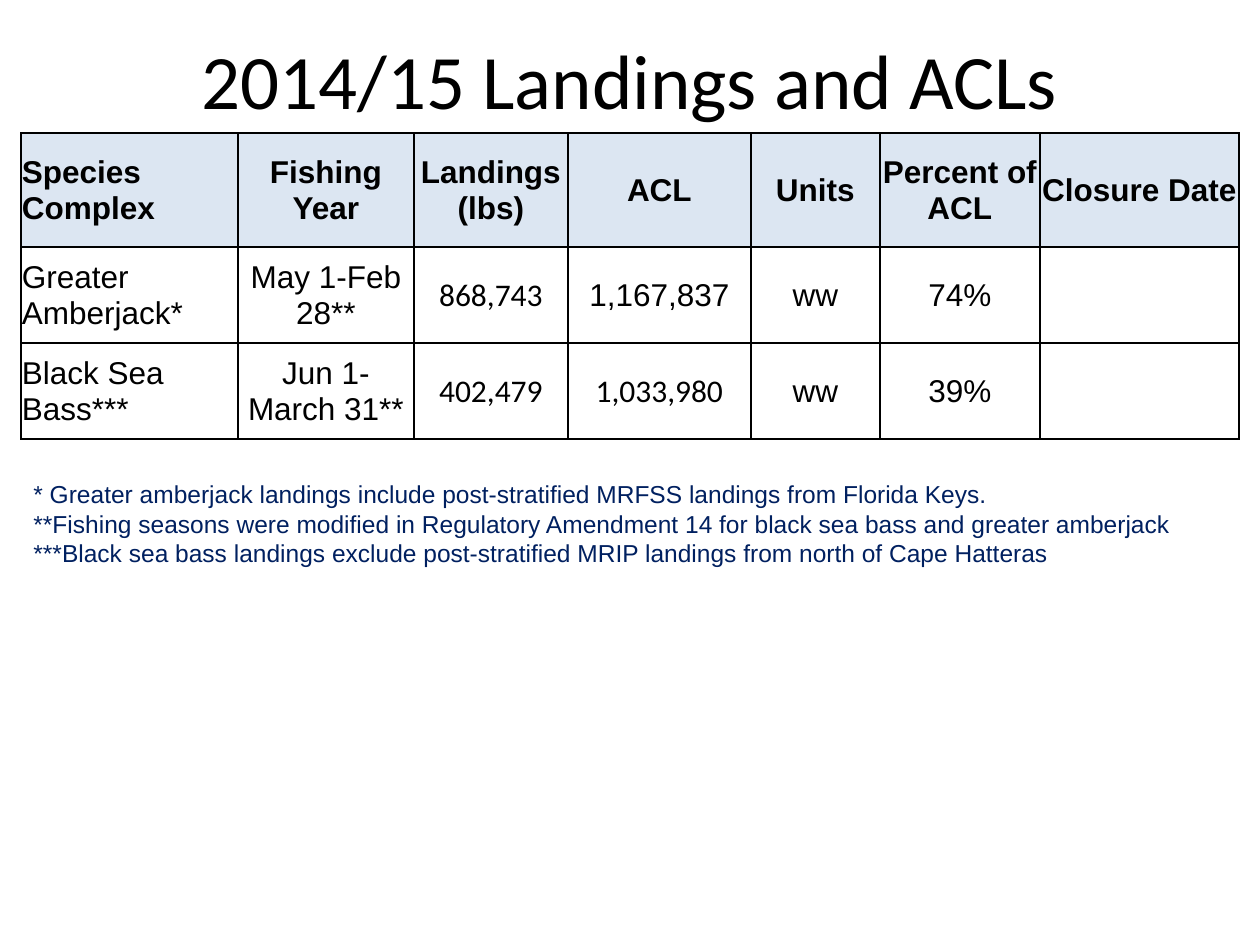
from lxml import etree
from pptx import Presentation
from pptx import util as u
from pptx.dml.color import RGBColor
from pptx.enum import text
from pptx.oxml.ns import qn

PX = 914400 / 126
COLORS = {"ink": "000000", "note": "002060", "head": "DCE6F2", "body": "FFFFFF"}
LEFT, WIDTH = 21, 1218


def px(n):
    return u.Emu(round(n * PX))


def write(tf, content, size=18, font="Arial", color="ink", bold=False, align="LEFT"):
    for i, line in enumerate(content.split("\n")):
        p = tf.paragraphs[0] if i == 0 else tf.add_paragraph()
        p.alignment = getattr(text.PP_ALIGN, align)
        r = p.add_run()
        r.text = line
        r.font.size, r.font.name, r.font.bold = u.Pt(size), font, bold
        r.font.color.rgb = RGBColor.from_string(COLORS[color])


prs = Presentation()
prs.slide_width, prs.slide_height = px(1260), px(945)
s = prs.slides.add_slide(prs.slide_layouts[5])

# Title
title = s.shapes.title
title.left, title.top, title.width, title.height = px(LEFT), px(0), px(WIDTH), px(158)
title.text_frame.vertical_anchor = text.MSO_ANCHOR.MIDDLE
write(title.text_frame, "2014/15 Landings and ACLs", size=44, font="Calibri", align="CENTER")

# Footnotes
notes = s.shapes.add_textbox(px(LEFT), px(473), px(1168), px(161))
notes.text_frame.word_wrap = False
write(notes.text_frame,
      "* Greater amberjack landings include post-stratified MRFSS landings from Florida Keys.\n"
      "**Fishing seasons were modified in Regulatory Amendment 14 for black sea bass and greater amberjack\n"
      "***Black sea bass landings exclude post-stratified MRIP landings from north of Cape Hatteras",
      size=14, color="note")

# Landings table
rows = [
    ["Species Complex", "Fishing Year", "Landings (lbs)", "ACL", "Units",
     "Percent of ACL", "Closure Date"],
    ["Greater Amberjack*", "May 1-Feb 28**", "868,743", "1,167,837", "ww", "74%", ""],
    ["Black Sea Bass***", "Jun 1-March 31**", "402,479", "1,033,980", "ww", "39%", ""],
]
col_widths = [217, 176, 154, 183, 129, 160, 199]
row_heights = [114, 96, 96]
calibri_cells = {(1, 2), (2, 2), (2, 3)}

table = s.shapes.add_table(len(rows), len(col_widths), px(LEFT), px(133),
                           px(WIDTH), px(sum(row_heights))).table
for col, width in zip(table.columns, col_widths):
    col.width = px(width)
for row, height in zip(table.rows, row_heights):
    row.height = px(height)

for i, row in enumerate(rows):
    for j, value in enumerate(row):
        cell = table.cell(i, j)
        cell.margin_left = cell.margin_right = cell.margin_top = px(1)
        cell.margin_bottom = 0
        cell.vertical_anchor = text.MSO_ANCHOR.MIDDLE

        # Borders come before the fill in the cell properties
        tcPr = cell._tc.get_or_add_tcPr()
        for side in ("a:lnL", "a:lnR", "a:lnT", "a:lnB"):
            ln = etree.SubElement(tcPr, qn(side), w=str(u.Pt(1)))
            solid = etree.SubElement(ln, qn("a:solidFill"))
            etree.SubElement(solid, qn("a:srgbClr"), val=COLORS["ink"])
        cell.fill.solid()
        cell.fill.fore_color.rgb = RGBColor.from_string(COLORS["body" if i else "head"])

        if value:
            write(cell.text_frame, value, bold=i == 0,
                  font="Calibri" if (i, j) in calibri_cells else "Arial",
                  align="CENTER" if j else "LEFT")

prs.save("out.pptx")
